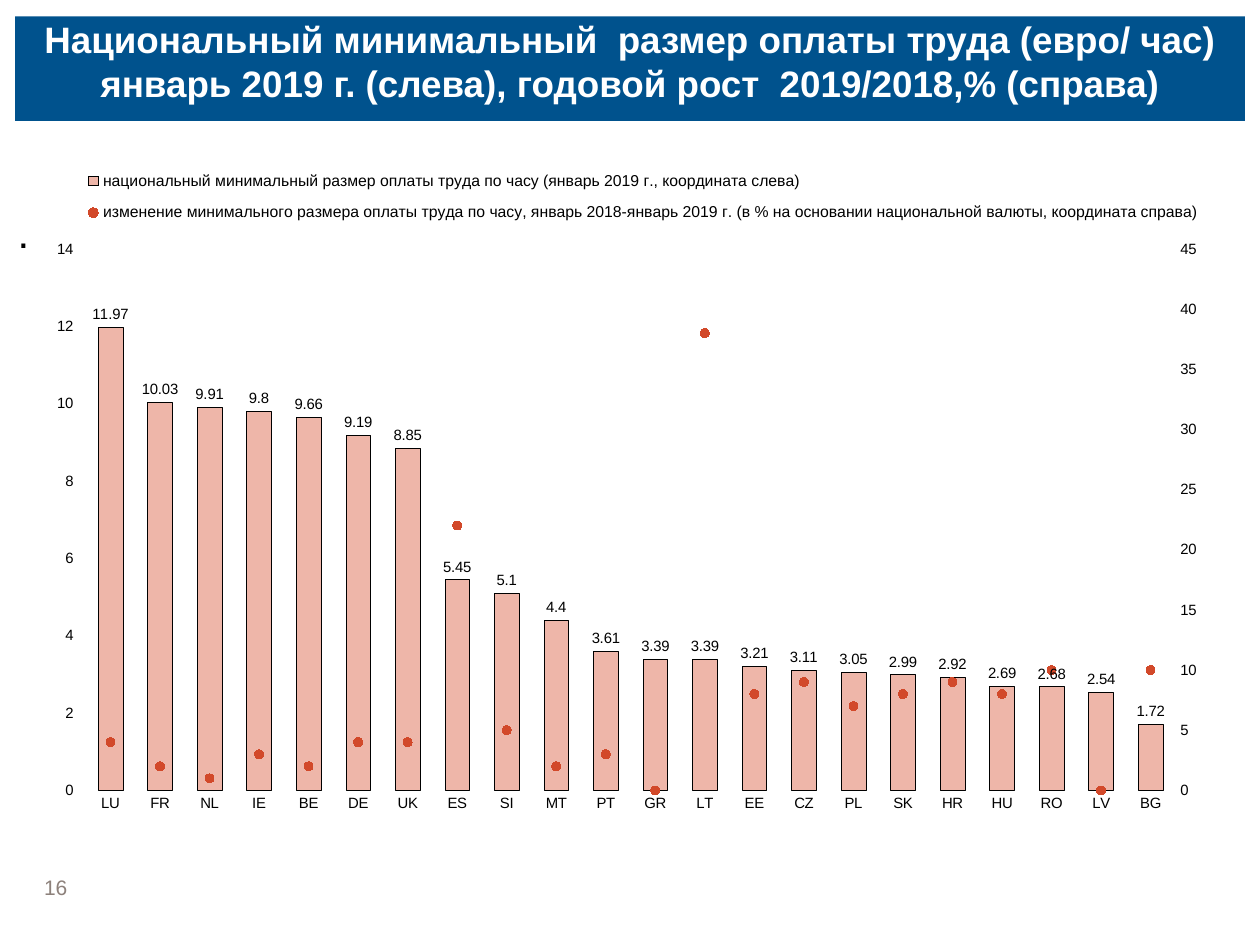
from copy import deepcopy

from lxml.etree import SubElement
from pptx import Presentation
from pptx.chart.data import CategoryChartData
from pptx.dml.color import RGBColor
from pptx.enum.chart import (XL_CHART_TYPE, XL_LABEL_POSITION, XL_LEGEND_POSITION,
                             XL_MARKER_STYLE, XL_TICK_MARK)
from pptx.enum.shapes import MSO_SHAPE
from pptx.enum.text import MSO_ANCHOR, PP_ALIGN
from pptx.oxml import parse_xml
from pptx.oxml.ns import nsdecls, qn
from pptx.util import Inches, Pt

FONT = "Arial"
WHITE = RGBColor(0xFF, 0xFF, 0xFF)
BLACK = RGBColor(0, 0, 0)
NAVY = RGBColor(0x00, 0x52, 0x8D)
GREY = RGBColor(0x8D, 0x81, 0x7B)
SALMON = RGBColor(0xEE, 0xB6, 0xA9)
RED = RGBColor(0xD2, 0x49, 0x2A)

TITLE = ("Национальный минимальный  размер оплаты труда (евро/ час)\v"
         "январь 2019 г. (слева), годовой рост  2019/2018,% (справа)")
WAGE_NAME = ("национальный минимальный размер оплаты труда по часу "
             "(январь 2019 г., координата слева)")
GROWTH_NAME = ("изменение минимального размера оплаты труда по часу, "
               "январь 2018-январь 2019 г. "
               "(в % на основании национальной валюты, координата справа)")
COUNTRIES = ("LU FR NL IE BE DE UK ES SI MT PT "
             "GR LT EE CZ PL SK HR HU RO LV BG").split()
WAGES = [11.97, 10.03, 9.91, 9.8, 9.66, 9.19, 8.85, 5.45, 5.1, 4.4, 3.61,
         3.39, 3.39, 3.21, 3.11, 3.05, 2.99, 2.92, 2.69, 2.68, 2.54, 1.72]
GROWTH = [4, 2, 1, 3, 2, 4, 4, 22, 5, 2, 3, 0, 38, 8, 9, 7, 8, 9, 8, 10, 0, 10]


def write_text(shape, text, *, size, color, bold=False, align=PP_ALIGN.LEFT,
               anchor=MSO_ANCHOR.TOP, side_inset=0.0):
    frame = shape.text_frame
    frame.word_wrap = True
    frame.vertical_anchor = anchor
    frame.margin_top = frame.margin_bottom = 0
    frame.margin_left = frame.margin_right = Inches(side_inset)
    frame.text = text
    paragraph = frame.paragraphs[0]
    paragraph.alignment = align
    for run in paragraph.runs:
        run.font.name = FONT
        run.font.size = Pt(size)
        run.font.bold = bold
        run.font.color.rgb = color


def add_label(slide, text, left, top, width, height, **text_format):
    label = slide.shapes.add_textbox(Inches(left), Inches(top),
                                     Inches(width), Inches(height))
    write_text(label, text, **text_format)


def add_title_band(slide):
    band = slide.shapes.add_shape(MSO_SHAPE.RECTANGLE, Inches(0.12), Inches(0.13),
                                  Inches(9.76), Inches(0.83))
    band.shadow.inherit = False
    band.fill.solid()
    band.fill.fore_color.rgb = NAVY
    band.line.fill.background()
    write_text(band, TITLE, size=21, color=WHITE, bold=True,
               align=PP_ALIGN.CENTER, side_inset=0.02)


def set_layout(parent, position, x, y, w, h, inner=False):
    """Place the plot area or legend by fractions of the chart."""
    for old in parent.findall(qn("c:layout")):
        parent.remove(old)
    layout = parse_xml(f'<c:layout {nsdecls("c")}><c:manualLayout/></c:layout>')
    settings = [("layoutTarget", "inner")] if inner else []
    settings += [("xMode", "edge"), ("yMode", "edge"),
                 ("x", x), ("y", y), ("w", w), ("h", h)]
    for tag, value in settings:
        SubElement(layout[0], qn(f"c:{tag}")).set("val", str(value))
    parent.insert(position, layout)


def format_axis(axis, tick):
    axis.has_major_gridlines = False
    axis.major_tick_mark = tick
    axis.minor_tick_mark = XL_TICK_MARK.NONE
    axis.format.line.fill.background()
    axis.tick_labels.font.size = Pt(8.5)
    axis.tick_labels.font.color.rgb = BLACK


def set_child(parent, tag, value):
    parent.find(qn(f"c:{tag}")).set("val", value)


def move_growth_to_right_axis(chart):
    """Turn the second series into a line plot with its own value axis."""
    plot_area = chart._chartSpace.chart.plotArea
    bars = plot_area.find(qn("c:barChart"))
    growth = bars.findall(qn("c:ser"))[1]
    for bar_setting in growth.findall(qn("c:invertIfNegative")):
        growth.remove(bar_setting)
    lines = parse_xml(
        f'<c:lineChart {nsdecls("c")}><c:grouping val="standard"/>'
        '<c:varyColors val="0"/><c:marker val="1"/>'
        '<c:axId val="5001"/><c:axId val="5002"/></c:lineChart>')
    lines.insert(2, growth)
    bars.addnext(lines)

    # Second pair of axes, derived from the first
    category = deepcopy(plot_area.find(qn("c:catAx")))
    value = deepcopy(plot_area.find(qn("c:valAx")))
    for axis, own, other in ((category, "5001", "5002"), (value, "5002", "5001")):
        set_child(axis, "axId", own)
        set_child(axis, "crossAx", other)
    set_child(category, "delete", "1")
    set_child(value, "axPos", "r")
    set_child(value, "crosses", "max")
    set_child(value, "majorUnit", "5")
    set_child(value.find(qn("c:scaling")), "max", "45")
    for tick in value.findall(qn("c:majorTickMark")):
        tick.set("val", "none")
    plot_area.find(qn("c:valAx")).addnext(value)
    value.addnext(category)


def add_wage_chart(slide):
    data = CategoryChartData()
    data.categories = COUNTRIES
    data.add_series(WAGE_NAME, WAGES)
    data.add_series(GROWTH_NAME, GROWTH)
    chart = slide.shapes.add_chart(XL_CHART_TYPE.COLUMN_CLUSTERED, Inches(0.2),
                                   Inches(1.15), Inches(9.61), Inches(5.51), data).chart
    chart.has_title = False
    chart.font.name = FONT
    chart.font.size = Pt(9)
    chart.font.color.rgb = BLACK

    # Axes
    format_axis(chart.category_axis, XL_TICK_MARK.NONE)
    wage_axis = chart.value_axis
    format_axis(wage_axis, XL_TICK_MARK.OUTSIDE)
    wage_axis.minimum_scale, wage_axis.maximum_scale = 0, 14
    wage_axis.major_unit = 2
    move_growth_to_right_axis(chart)

    # Wage columns
    columns, points = chart.plots
    columns.gap_width = 100
    columns.vary_by_categories = False
    wages = columns.series[0]
    wages.format.fill.solid()
    wages.format.fill.fore_color.rgb = SALMON
    wages.format.line.color.rgb = BLACK
    wages.format.line.width = Pt(0.25)
    labels = wages.data_labels
    labels.show_value = True
    labels.position = XL_LABEL_POSITION.OUTSIDE_END
    labels.font.size = Pt(8.5)
    labels.font.color.rgb = BLACK

    # Growth points
    growth = points.series[0]
    growth.smooth = False
    growth.format.line.fill.background()
    growth.marker.style = XL_MARKER_STYLE.CIRCLE
    growth.marker.size = 5
    growth.marker.format.fill.solid()
    growth.marker.format.fill.fore_color.rgb = RED
    growth.marker.format.line.color.rgb = RED

    # Legend and plot placement
    chart.has_legend = True
    chart.legend.position = XL_LEGEND_POSITION.TOP
    chart.legend.include_in_layout = False
    chart.legend.font.size = Pt(9)
    set_layout(chart.legend._element, 1, 0.04, 0.02, 0.94, 0.11)
    set_layout(chart._chartSpace.chart.plotArea, 0, 0.05, 0.15, 0.9, 0.78, inner=True)


def main():
    presentation = Presentation()
    presentation.slide_width, presentation.slide_height = Inches(10), Inches(7.5)
    slide = presentation.slides.add_slide(presentation.slide_layouts[6])

    add_label(slide, "16", 0.35, 6.79, 0.39, 0.35, size=12, color=GREY,
              anchor=MSO_ANCHOR.BOTTOM)
    add_title_band(slide)
    add_label(slide, ".", 0.12, 1.64, 9.76, 5.22, size=24, color=BLACK,
              side_inset=0.02)
    add_wage_chart(slide)
    presentation.save("out.pptx")


if __name__ == "__main__":
    main()
